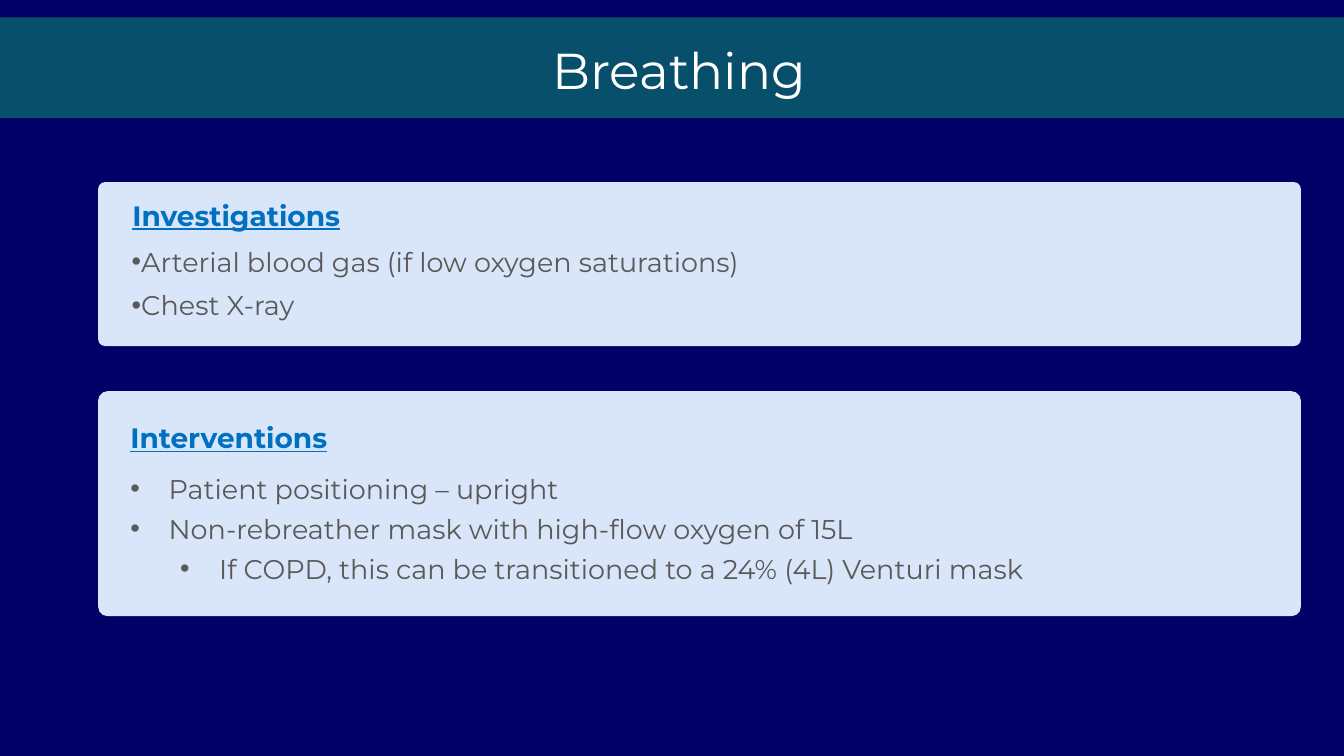
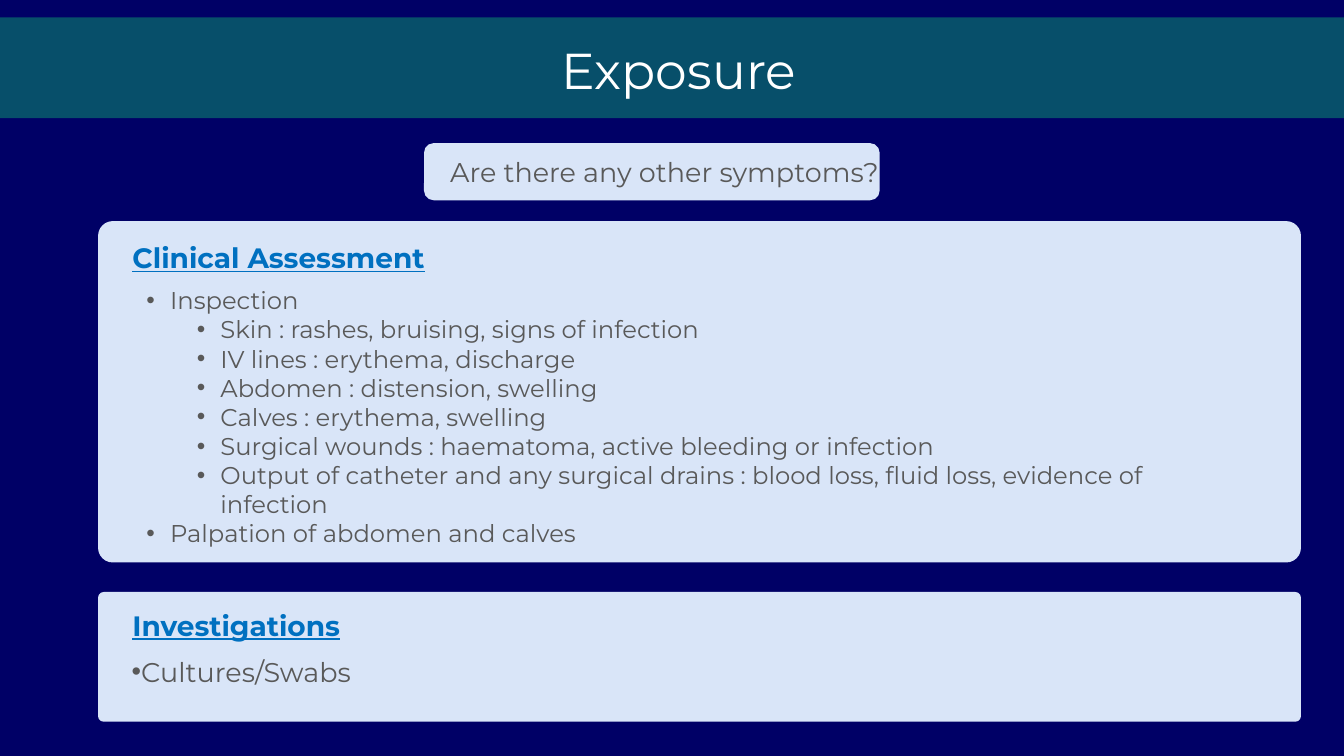
from dataclasses import dataclass

from lxml.etree import SubElement
from pptx import Presentation
from pptx.dml.color import RGBColor
from pptx.enum.shapes import MSO_SHAPE
from pptx.enum.text import MSO_ANCHOR, MSO_AUTO_SIZE, PP_ALIGN
from pptx.oxml.ns import qn
from pptx.util import Inches, Pt

# Content: bullets are (level, text); boxes are (left, top, width, height)
SLIDES = [
    {
        "title": "Breathing",
        "cards": [
            {
                "heading": "Investigations", "top": 2.71, "height": 2.44,
                "heading_box": (1.82, 2.88, 4.04, 0.66),
                "body_box": (1.81, 3.58, 16.59, 1.3),
                "style": "tight",
                "bullets": [
                    (0, "Arterial blood gas (if low oxygen saturations)"),
                    (0, "Chest X-ray"),
                ],
            },
            {
                "heading": "Interventions", "top": 5.82, "height": 3.35,
                "heading_box": (1.79, 6.19, 3.74, 0.66),
                "body_box": (1.79, 6.96, 16.59, 1.84),
                "style": "wide",
                "bullets": [
                    (0, "Patient positioning – upright"),
                    (0, "Non-rebreather mask with high-flow oxygen of 15L"),
                    (1, "If COPD, this can be transitioned to a 24% (4L) Venturi mask"),
                ],
            },
        ],
    },
    {
        "title": "Exposure",
        "question": "Are there any other symptoms?",
        "cards": [
            {
                "heading": "Clinical Assessment", "top": 3.29, "height": 5.08,
                "heading_box": (1.82, 3.51, 4.94, 0.66),
                "body_box": (1.81, 4.18, 16.59, 4.09),
                "style": "dense",
                "bullets": [
                    (0, "Inspection"),
                    (1, "Skin : rashes, bruising, signs of infection"),
                    (1, "IV lines : erythema, discharge"),
                    (1, "Abdomen : distension, swelling"),
                    (1, "Calves : erythema, swelling"),
                    (1, "Surgical wounds : haematoma, active bleeding or infection"),
                    (1, "Output of catheter and any surgical drains : "
                        "blood loss, fluid loss, evidence of infection"),
                    (0, "Palpation of abdomen and calves"),
                ],
            },
            {
                "heading": "Investigations", "top": 8.81, "height": 1.93,
                "heading_box": (1.82, 8.98, 3.8, 0.66),
                "body_box": (1.81, 9.68, 16.59, 0.64),
                "style": "tight",
                "bullets": [(0, "Cultures/Swabs")],
            },
        ],
    },
]


@dataclass(frozen=True)
class Theme:
    background: str = "000066"
    band: str = "074F6A"
    card: str = "D9E5F8"
    title: str = "FFFFFF"
    heading: str = "0070C0"
    body: str = "595959"
    font: str = "Montserrat"
    title_size: int = 54
    heading_size: int = 30
    body_size: int = 29
    dense_size: int = 26


THEME = Theme()
TITLE_FONT = {"size": THEME.title_size, "color": THEME.title, "bold": False}
HEADING_FONT = {"size": THEME.heading_size, "color": THEME.heading,
                "bold": True, "underline": True}
BODY_FONT = {"size": THEME.body_size, "color": THEME.body}
DENSE_FONT = {"size": THEME.dense_size, "color": THEME.body}

# Bullet styles: left margin, hanging indent (inches), space between (points)
BULLET_STYLES = {
    "tight": {"margin": 0.12, "hanging": 0.13, "gap": 12, "font": BODY_FONT},
    "wide": {"margin": 0.57, "hanging": 0.58, "gap": 8, "font": BODY_FONT},
    "dense": {"margin": 0.57, "hanging": 0.35, "gap": 0, "font": DENSE_FONT},
}
LEVEL_STEP = 0.75

# Shared layout
SLIDE_SIZE = (20, 11.25)
BAND_BOX = (0, 0.26, 20, 1.5)
TITLE_BOX = (0.49, 0.51, 19.23, 1.06)
QUESTION_CARD = (6.31, 2.13, 6.78, 0.85)
QUESTION_BOX = (6.5, 2.24, 6.78, 0.64)
CARD_LEFT, CARD_WIDTH = 1.46, 17.9
CARD_CORNER, QUESTION_CORNER = 0.043, 0.167
FRAME_FORMAT = {
    "margin_left": Inches(0.15), "margin_right": Inches(0.15),
    "margin_top": Inches(0.07), "margin_bottom": Inches(0.07),
    "word_wrap": True, "vertical_anchor": MSO_ANCHOR.TOP,
    "auto_size": MSO_AUTO_SIZE.NONE,
}


def inches(box):
    return [Inches(length) for length in box]


def set_attributes(target, values):
    for name, value in values.items():
        setattr(target, name, value)


# Text
def write(paragraph, text, font_format, alignment=PP_ALIGN.LEFT):
    paragraph.alignment = alignment
    run = paragraph.add_run()
    run.text = text
    values = dict(font_format, name=THEME.font, size=Pt(font_format["size"]))
    run.font.color.rgb = RGBColor.from_string(values.pop("color"))
    set_attributes(run.font, values)


def add_text(slide, box):
    frame = slide.shapes.add_textbox(*inches(box)).text_frame
    set_attributes(frame, FRAME_FORMAT)
    return frame


def set_bullet(paragraph, level, style):
    paragraph.level = level
    properties = paragraph._p.get_or_add_pPr()
    properties.set("marL", str(Inches(style["margin"] + level * LEVEL_STEP)))
    properties.set("indent", str(-Inches(style["hanging"])))
    color = SubElement(properties, qn("a:buClr"))
    SubElement(color, qn("a:srgbClr"), val=THEME.body)
    SubElement(properties, qn("a:buFont"), typeface="Arial")
    SubElement(properties, qn("a:buChar"), char="•")


def add_bullets(slide, box, bullets, style):
    frame = add_text(slide, box)
    for index, (level, text) in enumerate(bullets):
        paragraph = frame.add_paragraph() if index else frame.paragraphs[0]
        paragraph.space_before = Pt(style["gap"] if index else 0)
        set_bullet(paragraph, level, style)
        write(paragraph, text, style["font"])


# Shapes
def add_panel(slide, box, color, corner=None):
    kind = MSO_SHAPE.RECTANGLE if corner is None else MSO_SHAPE.ROUNDED_RECTANGLE
    shape = slide.shapes.add_shape(kind, *inches(box))
    shape.shadow.inherit = False
    shape.fill.solid()
    shape.fill.fore_color.rgb = RGBColor.from_string(color)
    shape.line.fill.background()
    if corner is not None:
        shape.adjustments[0] = corner
    return shape


def add_title(slide, text):
    title = slide.shapes.title
    band = add_panel(slide, BAND_BOX, THEME.band)
    title.element.addprevious(band.element)  # the band lies behind the title
    set_attributes(title, dict(zip(("left", "top", "width", "height"), inches(TITLE_BOX))))
    set_attributes(title.text_frame, FRAME_FORMAT)
    write(title.text_frame.paragraphs[0], text, TITLE_FONT, PP_ALIGN.CENTER)


def add_question(slide, text):
    add_panel(slide, QUESTION_CARD, THEME.card, QUESTION_CORNER)
    frame = add_text(slide, QUESTION_BOX)
    write(frame.paragraphs[0], text, BODY_FONT, PP_ALIGN.CENTER)


def add_card(slide, card):
    box = (CARD_LEFT, card["top"], CARD_WIDTH, card["height"])
    add_panel(slide, box, THEME.card, CARD_CORNER)
    heading = add_text(slide, card["heading_box"])
    write(heading.paragraphs[0], card["heading"], HEADING_FONT)
    add_bullets(slide, card["body_box"], card["bullets"], BULLET_STYLES[card["style"]])


# Presentation
def main():
    presentation = Presentation()
    presentation.slide_width, presentation.slide_height = inches(SLIDE_SIZE)
    title_only = presentation.slide_layouts[5]
    for content in SLIDES:
        slide = presentation.slides.add_slide(title_only)
        slide.background.fill.solid()
        slide.background.fill.fore_color.rgb = RGBColor.from_string(THEME.background)
        add_title(slide, content["title"])
        if "question" in content:
            add_question(slide, content["question"])
        for card in content["cards"]:
            add_card(slide, card)
    presentation.save("out.pptx")


if __name__ == "__main__":
    main()
